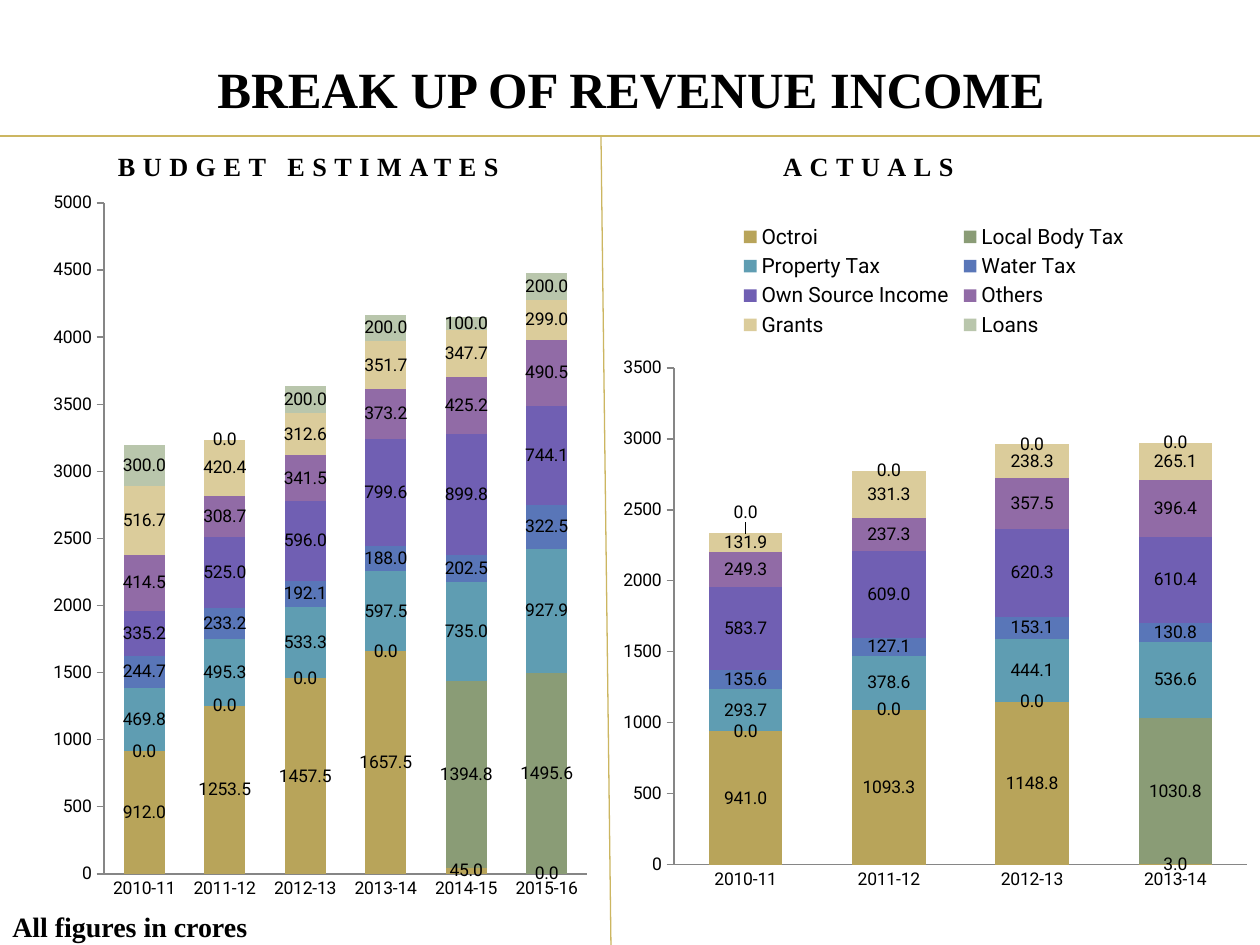
"""Build the revenue income slide with two stacked column charts."""
from lxml import etree
from pptx import Presentation
from pptx.chart.data import CategoryChartData
from pptx.dml.color import RGBColor
from pptx.enum.chart import XL_CHART_TYPE, XL_LABEL_POSITION, XL_LEGEND_POSITION, XL_TICK_MARK
from pptx.enum.shapes import MSO_CONNECTOR
from pptx.enum.text import MSO_ANCHOR, MSO_AUTO_SIZE, PP_ALIGN
from pptx.oxml.ns import qn
from pptx.util import Pt

PX = 914400 / 126
STACKED = XL_CHART_TYPE.COLUMN_STACKED
STRAIGHT = MSO_CONNECTOR.STRAIGHT
LABEL_CENTER = XL_LABEL_POSITION.CENTER
LEGEND_TOP = XL_LEGEND_POSITION.TOP
CENTER, LEFT = PP_ALIGN.CENTER, PP_ALIGN.LEFT
MIDDLE, BOTTOM, TOP = MSO_ANCHOR.MIDDLE, MSO_ANCHOR.BOTTOM, MSO_ANCHOR.TOP
NO_TICK, OUTSIDE = XL_TICK_MARK.NONE, XL_TICK_MARK.OUTSIDE
NO_RESIZE = MSO_AUTO_SIZE.NONE

BLACK = RGBColor(0x00, 0x00, 0x00)
GOLD = RGBColor(0xCC, 0xB6, 0x61)
GRAY = RGBColor(0x86, 0x86, 0x86)
SERIES_COLORS = [
    RGBColor(0xB8, 0xA4, 0x5A), RGBColor(0x8A, 0x9C, 0x76),
    RGBColor(0x5F, 0x9D, 0xB2), RGBColor(0x59, 0x76, 0xB8),
    RGBColor(0x70, 0x5F, 0xB3), RGBColor(0x91, 0x6B, 0xA6),
    RGBColor(0xDB, 0xCC, 0x9B), RGBColor(0xB9, 0xC6, 0xAC),
]

BUDGET = {
    "Series 1": (912, 1253.5, 1457.5, 1657.5, 45, 0),
    "Series 2": (0, 0, 0, 0, 1394.8, 1495.6),
    "Series 3": (469.8, 495.3, 533.3, 597.5, 735, 927.9),
    "Series 4": (244.7, 233.2, 192.1, 188, 202.5, 322.5),
    "Series 5": (335.2, 525, 596, 799.6, 899.8, 744.1),
    "Series 6": (414.5, 308.7, 341.5, 373.2, 425.2, 490.5),
    "Series 7": (516.7, 420.4, 312.6, 351.7, 347.7, 299),
    "Series 8": (300, 0, 200, 200, 100, 200),
}
ACTUALS = {
    "Octroi": (941, 1093.3, 1148.8, 3),
    "Local Body Tax": (0, 0, 0, 1030.8),
    "Property Tax": (293.7, 378.6, 444.1, 536.6),
    "Water Tax": (135.6, 127.1, 153.1, 130.8),
    "Own Source Income": (583.7, 609, 620.3, 610.4),
    "Others": (249.3, 237.3, 357.5, 396.4),
    "Grants": (131.9, 331.3, 238.3, 265.1),
    "Loans": (0, 0, 0, 0),
}
YEARS = ["2010-11", "2011-12", "2012-13", "2013-14", "2014-15", "2015-16"]


def px(*values):
    return [round(v * PX) for v in values]


def make_layout(frame, box, *modes):
    layout = etree.Element(qn("c:layout"))
    manual = etree.SubElement(layout, qn("c:manualLayout"))
    sizes = zip("xywh", box, frame[2:] * 2)
    for tag, val in [*modes, *((tag, v / full) for tag, v, full in sizes)]:
        etree.SubElement(manual, qn(f"c:{tag}")).set("val", str(val))
    return layout


prs = Presentation()
prs.slide_width, prs.slide_height = px(1260, 945)
slide = prs.slides.add_slide(prs.slide_layouts[5])
shapes = slide.shapes

EDGE = (("xMode", "edge"), ("yMode", "edge"))
INNER = ("layoutTarget", "inner")
charts = [
    ((42, 179, 557, 735), (62, 24, 483, 671), BUDGET, 5000, None),
    ((611, 210, 649, 693), (63, 158, 573, 497), ACTUALS, 3500, (125, 10, 396, 122)),
]
for frame, plot_box, series, top, legend_box in charts:
    data = CategoryChartData()
    data.categories = YEARS[:len(series[next(iter(series))])]
    for name, values in series.items():
        data.add_series(name, values)
    chart = shapes.add_chart(STACKED, *px(*frame), data).chart
    chart.has_title = False
    chart.font.size = Pt(10)
    chart.font.name = "Roboto"
    chart.font.color.rgb = BLACK

    plot = chart.plots[0]
    plot.gap_width = 95
    plot.overlap = 100
    plot.vary_by_categories = False
    for ser, color in zip(plot.series, SERIES_COLORS):
        ser.format.fill.solid()
        ser.format.fill.fore_color.rgb = color
        labels = ser.data_labels
        labels.show_value = True
        labels.number_format = "0.0"
        labels.number_format_is_linked = False
        labels.position = LABEL_CENTER

    for axis, tick in ((chart.category_axis, NO_TICK), (chart.value_axis, OUTSIDE)):
        axis.has_major_gridlines = False
        axis.major_tick_mark = tick
        axis.minor_tick_mark = NO_TICK
        axis.format.line.color.rgb = GRAY
        axis.format.line.width = Pt(0.75)
    axis.minimum_scale, axis.maximum_scale, axis.major_unit = 0, top, 500
    axis.tick_labels.number_format = "0"
    axis.tick_labels.number_format_is_linked = False

    area = chart.element.find(".//" + qn("c:plotArea"))
    for old in area.findall(qn("c:layout")):
        area.remove(old)
    area.insert(0, make_layout(frame, plot_box, INNER, *EDGE))

    chart.has_legend = legend_box is not None
    if legend_box:
        chart.legend.position = LEGEND_TOP
        chart.legend.include_in_layout = False
        chart.legend.font.size = Pt(12)
        legend = chart.element.find(".//" + qn("c:legend"))
        for old in legend.findall(qn("c:layout")):
            legend.remove(old)
        legend.find(qn("c:legendPos")).addnext(make_layout(frame, legend_box, *EDGE))

loans = chart.plots[0].series[7]
loans.points[0].data_label.position = LABEL_CENTER
raised = loans.data_labels._element.find(qn("c:dLbl"))
num_fmt = etree.Element(qn("c:numFmt"), formatCode="0.0", sourceLinked="0")
raised.find(qn("c:idx")).addnext(num_fmt)
num_fmt.addprevious(make_layout(frame, (0, -21)))

for ends in ((601, 136, 611, 945), (0, 136, 1260, 136)):
    line = shapes.add_connector(STRAIGHT, *px(*ends))
    line.line.color.rgb = GOLD
    line.line.width = Pt(0.75)
    etree.SubElement(line.element.spPr, qn("a:effectLst"))

texts = [
    ("BREAK UP OF REVENUE INCOME", (113, 50, 1037, 76), 29, CENTER, MIDDLE, 0),
    ("BUDGET ESTIMATES", (63, 135, 491, 53), 15, CENTER, BOTTOM, 430),
    ("ACTUALS", (648, 140, 441, 48), 15, CENTER, BOTTOM, 430),
    ("All figures in crores", (0, 903, 315, 47), 16, LEFT, TOP, 0),
]
for text, box, size, align, anchor, spacing in texts:
    sp = shapes.add_textbox(*px(*box)) if size < 20 else shapes.title
    sp.left, sp.top, sp.width, sp.height = px(*box)
    tf = sp.text_frame
    tf.word_wrap = True
    tf.auto_size = NO_RESIZE
    tf.vertical_anchor = anchor
    p = tf.paragraphs[0]
    p.alignment = align
    r = p.add_run()
    r.text = text
    r.font.name = "Times New Roman"
    r.font.size = Pt(size)
    r.font.bold = True
    r.font.color.rgb = BLACK
    if spacing:
        r.font._element.set("spc", str(spacing))

prs.save("out.pptx")
